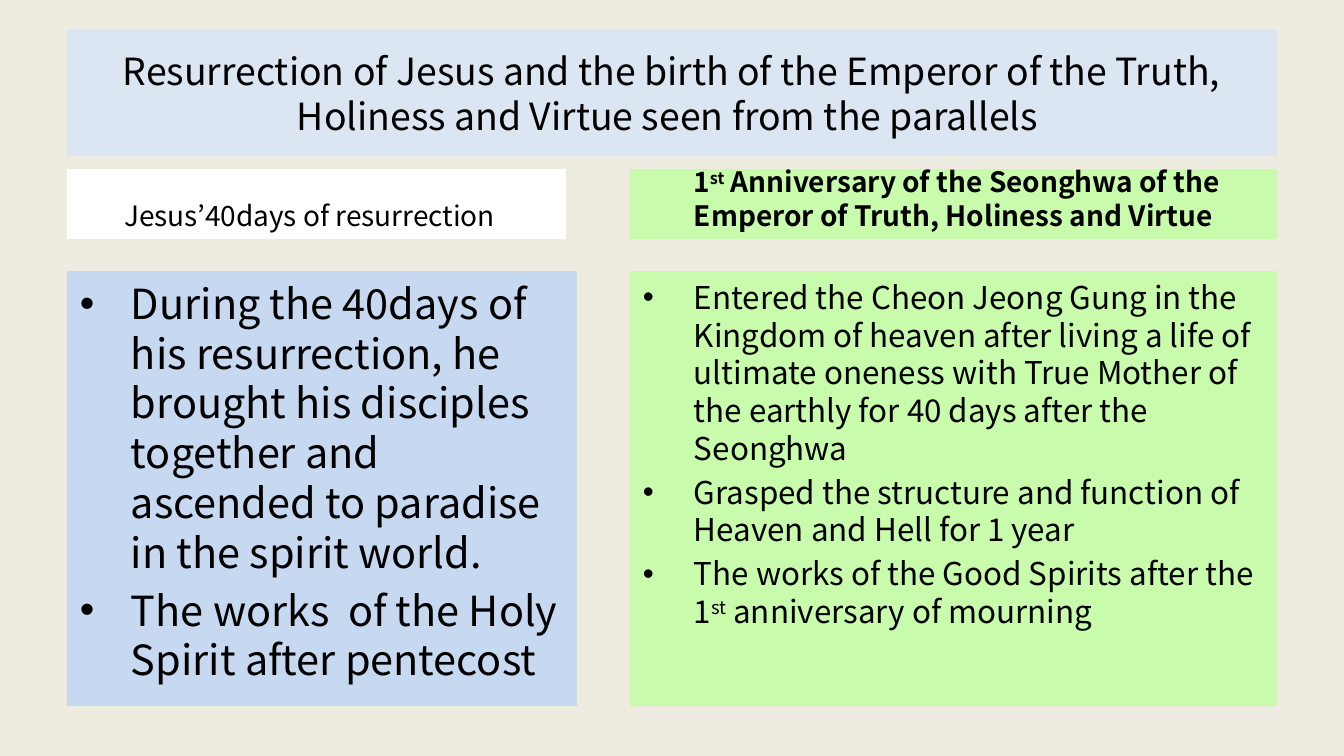
from dataclasses import dataclass

import lxml.etree
import pptx
import pptx.dml.color
import pptx.enum.shapes
import pptx.enum.text
import pptx.oxml.ns
import pptx.util

EMU_PER_PX = 914400 / 134.4
FONT = "Noto Sans CJK KR"
INSET_X, INSET_Y, HANGING = 13, 7, 51
LEFT_X, RIGHT_X, RIGHT_WIDTH = 67, 630, 647
HEADING_Y, HEADING_HEIGHT = 169, 70
BODY_Y, BODY_HEIGHT = 271, 435

ANCHOR = pptx.enum.text.MSO_ANCHOR
ALIGN = pptx.enum.text.PP_ALIGN


@dataclass(frozen=True)
class Panel:
    """A filled box of text; text between ^ marks is superscript."""
    left: int
    top: int
    width: int
    height: int
    fill: str
    size: float
    paragraphs: tuple[str, ...]
    anchor: ANCHOR = ANCHOR.MIDDLE
    bold: bool = False
    bulleted: bool = False
    right_inset: int = INSET_X


PANELS = (
    Panel(LEFT_X, 30, 1210, 126, "DCE6F2", 20, (
        "Resurrection of Jesus and the birth of the Emperor of the Truth, "
        "Holiness and Virtue seen from the parallels ",)),
    Panel(LEFT_X, HEADING_Y, 499, HEADING_HEIGHT, "FFFFFF", 15, (
        "Jesus’40days of resurrection",),
        anchor=ANCHOR.BOTTOM, right_inset=INSET_X + 14),
    Panel(LEFT_X, BODY_Y, 510, BODY_HEIGHT, "C6D9F1", 22.2, (
        "During the 40days of his resurrection, he brought his disciples "
        "together and ascended to paradise in the spirit world.",
        "The works  of the Holy Spirit after pentecost"),
        anchor=ANCHOR.TOP, bulleted=True),
    Panel(RIGHT_X, HEADING_Y, RIGHT_WIDTH, HEADING_HEIGHT, "C8FBAB", 15, (
        " 1^st^ Anniversary of the Seonghwa of the Emperor of Truth, "
        "Holiness and Virtue",),
        anchor=ANCHOR.BOTTOM, bold=True),
    Panel(RIGHT_X, BODY_Y, RIGHT_WIDTH, BODY_HEIGHT, "C8FBAB", 16.8, (
        "Entered the Cheon Jeong Gung in the Kingdom of heaven after living a "
        "life of ultimate oneness with True Mother of the earthly for 40 days "
        "after the Seonghwa",
        "Grasped the structure and function of Heaven and Hell for 1 year",
        "The works of the Good Spirits after the 1^st^ anniversary of mourning"),
        anchor=ANCHOR.TOP, bulleted=True),
)


def px(length: int) -> int:
    return pptx.util.Emu(round(length * EMU_PER_PX))


def color(value: str) -> pptx.dml.color.RGBColor:
    return pptx.dml.color.RGBColor.from_string(value)


def add_bullet(paragraph) -> None:
    properties = paragraph._p.get_or_add_pPr()
    properties.set("marL", str(px(HANGING)))
    properties.set("indent", str(-px(HANGING)))
    for tag, name, value in (("a:buFont", "typeface", "Arial"),
                             ("a:buChar", "char", "•")):
        element = lxml.etree.SubElement(properties, pptx.oxml.ns.qn(tag))
        element.set(name, value)


def write_paragraph(paragraph, text: str, panel: Panel) -> None:
    paragraph.alignment = ALIGN.LEFT if panel.bulleted else ALIGN.CENTER
    if panel.bulleted:
        add_bullet(paragraph)
    for index, part in enumerate(text.split("^")):
        run = paragraph.add_run()
        run.text = part
        run.font.name = FONT
        run.font.size = pptx.util.Pt(panel.size)
        run.font.bold = panel.bold
        run.font.color.rgb = color("000000")
        if index % 2:
            run._r.get_or_add_rPr().set("baseline", "30000")


def add_panel(slide, panel: Panel) -> None:
    shape = slide.shapes.add_shape(
        pptx.enum.shapes.MSO_SHAPE.RECTANGLE,
        px(panel.left), px(panel.top), px(panel.width), px(panel.height))
    shape.shadow.inherit = False
    shape.fill.solid()
    shape.fill.fore_color.rgb = color(panel.fill)
    shape.line.fill.background()

    frame = shape.text_frame
    frame.word_wrap = True
    frame.vertical_anchor = panel.anchor
    frame.margin_left, frame.margin_right = px(INSET_X), px(panel.right_inset)
    frame.margin_top = frame.margin_bottom = px(INSET_Y)
    for index, text in enumerate(panel.paragraphs):
        paragraph = frame.add_paragraph() if index else frame.paragraphs[0]
        if index:
            paragraph.space_before = pptx.util.Pt(round(panel.size * 0.2, 1))
        write_paragraph(paragraph, text, panel)


def main() -> None:
    presentation = pptx.Presentation()
    presentation.slide_width, presentation.slide_height = px(1344), px(756)
    slide = presentation.slides.add_slide(presentation.slide_layouts[6])
    slide.background.fill.solid()
    slide.background.fill.fore_color.rgb = color("EEECE1")
    for panel in PANELS:
        add_panel(slide, panel)
    presentation.save("out.pptx")


if __name__ == "__main__":
    main()
